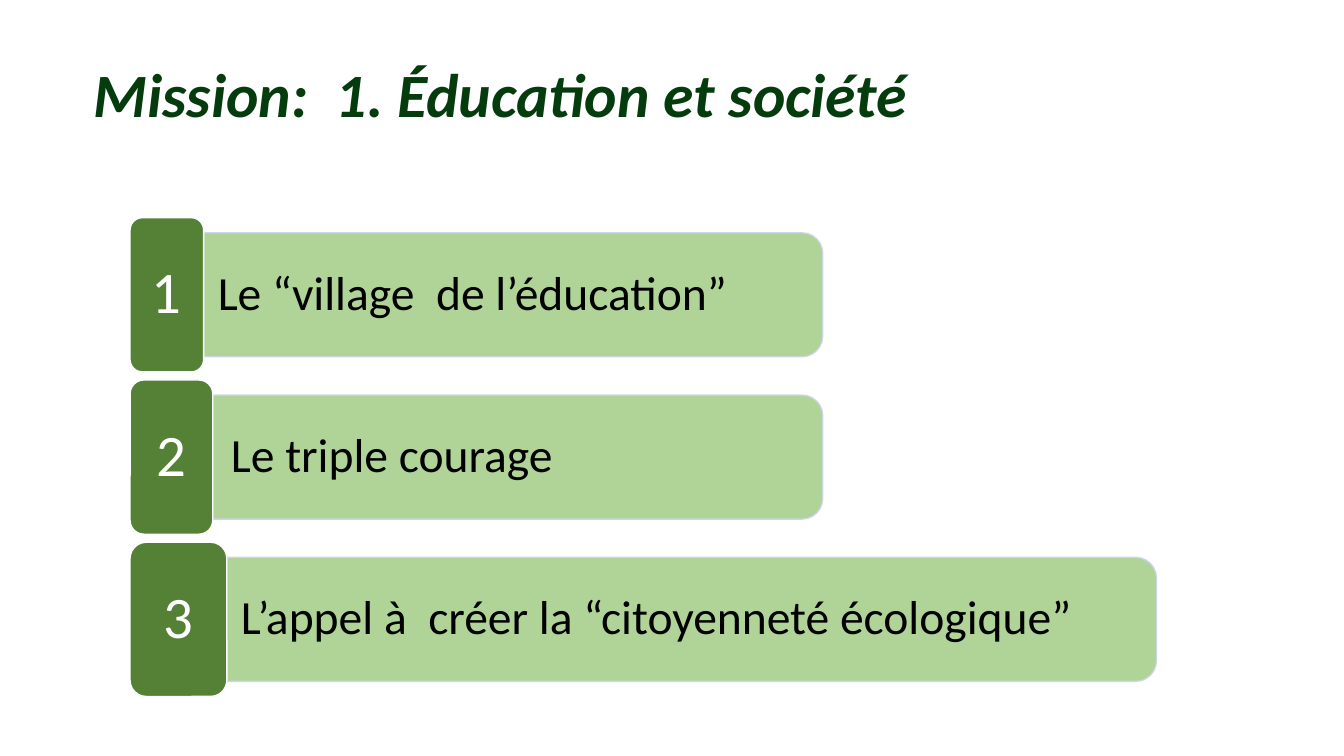
from lxml import etree
from pptx import Presentation
from pptx.dml.color import RGBColor
from pptx.enum.shapes import MSO_SHAPE
from pptx.enum.text import MSO_ANCHOR, PP_ALIGN
from pptx.oxml.ns import qn
from pptx.util import Inches, Pt

TILE = MSO_SHAPE.ROUNDED_RECTANGLE
BAR = MSO_SHAPE.ROUND_2_SAME_RECTANGLE
TOP, MIDDLE = MSO_ANCHOR.TOP, MSO_ANCHOR.MIDDLE
LEFT, CENTER = PP_ALIGN.LEFT, PP_ALIGN.CENTER

DARK_GREEN = RGBColor(0x05, 0x3C, 0x0E)
TILE_GREEN = RGBColor(0x54, 0x81, 0x35)
BAR_GREEN = RGBColor(0xA8, 0xD0, 0x8C)
BAR_EDGE = RGBColor(0xCC, 0xD3, 0xEA)
WHITE = RGBColor(0xFF, 0xFF, 0xFF)
BLACK = RGBColor(0, 0, 0)

FONT = "Calibri"
ROW_LEFT, ROW_TOP, ROW_PITCH = 1.29, 2.16, 1.61
TILE_HEIGHT, BAR_HEIGHT = 1.53, 1.23
CORNER = 0.167

# tile width, bar width, gap before the text, text
ROWS = [
    (0.73, 6.14, 0, "Le “village  de l’éducation”"),
    (0.82, 6.05, 0.04, "Le triple courage"),
    (0.96, 9.22, 0, "L’appel à  créer la “citoyenneté écologique”"),
]


def write(sp, text, size, color, align=LEFT, anchor=MIDDLE, margin=0.0):
    tf = sp.text_frame
    tf.word_wrap = True
    tf.vertical_anchor = anchor
    tf.margin_left = tf.margin_right = Inches(margin)
    tf.margin_top = tf.margin_bottom = Inches(margin / 2)
    p = tf.paragraphs[0]
    p.alignment = align
    p.line_spacing = 0.9
    r = p.add_run()
    r.text = text
    r.font.name = FONT
    r.font.size = Pt(size)
    r.font.color.rgb = color
    return r


def add_filled(s, kind, x, y, w, h, fill, edge):
    sp = s.shapes.add_shape(kind, Inches(x), Inches(y), Inches(w), Inches(h))
    sp.shadow.inherit = False
    sp.adjustments[0] = CORNER
    sp.fill.solid()
    sp.fill.fore_color.rgb = fill
    sp.line.color.rgb = edge
    sp.line.width = Pt(1)
    return sp


def add_title(s, x, y, w, h, text):
    box = s.shapes.add_textbox(Inches(x), Inches(y), Inches(w), Inches(h))
    r = write(box, text, 44, DARK_GREEN, anchor=TOP, margin=0.1)
    r.font.bold = r.font.italic = True


def add_bar(s, x, y, w, h):
    """Bar with rounded right corners: an upright shape turned a quarter."""
    sp = add_filled(s, BAR, x + (w - h) / 2, y + (h - w) / 2, h, w,
                    BAR_GREEN, BAR_EDGE)
    sp.rotation = 90
    for color in sp._element.spPr.iter(qn("a:srgbClr")):
        etree.SubElement(color, qn("a:alpha"), val="90000")


def add_row(s, x, y, number, tile_w, bar_w, gap, text):
    bar_x = x + tile_w
    bar_y = y + (TILE_HEIGHT - BAR_HEIGHT) / 2
    add_bar(s, bar_x, bar_y, bar_w, BAR_HEIGHT)
    box = s.shapes.add_textbox(Inches(bar_x + gap), Inches(bar_y),
                               Inches(bar_w - gap), Inches(BAR_HEIGHT))
    write(box, text, 34, BLACK, margin=0.14)
    tile = add_filled(s, TILE, x, y, tile_w, TILE_HEIGHT, TILE_GREEN, WHITE)
    write(tile, str(number), 42, WHITE, CENTER)


def main():
    prs = Presentation()
    prs.slide_width, prs.slide_height = Inches(13.33), Inches(7.5)
    s = prs.slides.add_slide(prs.slide_layouts[6])
    add_title(s, 0.83, 0.59, 11.5, 1.45, "Mission:  1. Éducation et société")
    for i, row in enumerate(ROWS):
        add_row(s, ROW_LEFT, ROW_TOP + i * ROW_PITCH, i + 1, *row)
    prs.save("out.pptx")


if __name__ == "__main__":
    main()
